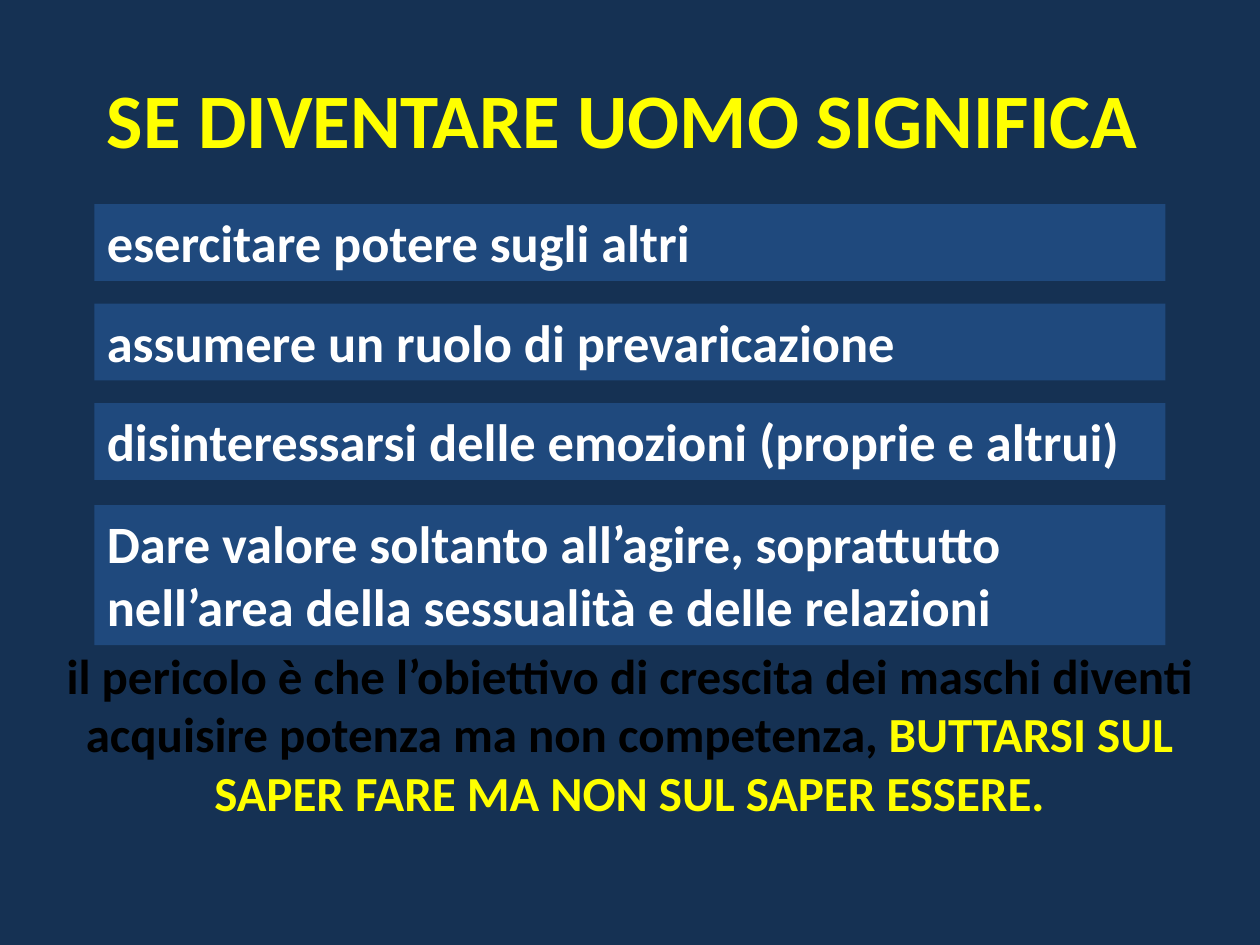
"""Build a slide on what becoming a man is taken to mean."""
from pptx import Presentation
from pptx.dml.color import RGBColor
from pptx.enum.shapes import MSO_SHAPE as Shape
from pptx.enum.text import MSO_ANCHOR as Anchor, PP_ALIGN as Align
from pptx.util import Inches, Pt

NAVY = RGBColor(0x15, 0x31, 0x53)
BLUE = RGBColor(0x1F, 0x49, 0x7D)
YELLOW = RGBColor(0xFF, 0xFF, 0x00)
WHITE = RGBColor(0xFF, 0xFF, 0xFF)
BLACK = RGBColor(0x00, 0x00, 0x00)


def write(box, spans, size, align):
    frame = box.text_frame
    frame.word_wrap = True
    frame.vertical_anchor = Anchor.TOP
    para = frame.paragraphs[0]
    para.alignment = align
    para.font.name = "Calibri"
    para.font.size = Pt(size)
    para.font.bold = True
    for text, color in spans:
        span = para.add_run()
        span.text = text
        span.font.color.rgb = color


deck = Presentation()
deck.slide_width = Inches(10)
deck.slide_height = Inches(7.5)
page = deck.slides.add_slide(deck.slide_layouts[6])
page.background.fill.solid()
page.background.fill.fore_color.rgb = NAVY

title = page.shapes.add_textbox(Inches(0.75), Inches(0.52), Inches(8.5), Inches(0.84))
write(title, [("SE DIVENTARE UOMO SIGNIFICA", YELLOW)], 44, Align.LEFT)

warning = page.shapes.add_textbox(Inches(0.35), Inches(5.07), Inches(9.29), Inches(1.51))
write(warning, [
    ("il pericolo è che l’obiettivo di crescita dei maschi diventi "
     "acquisire potenza ma non competenza, ", BLACK),
    ("BUTTARSI SUL SAPER FARE MA NON SUL SAPER ESSERE.", YELLOW),
], 28, Align.CENTER)

meanings = [
    (1.62, 0.61, "esercitare potere sugli altri"),
    (2.41, 0.61, "assumere un ruolo di prevaricazione"),
    (3.2, 0.61, "disinteressarsi delle emozioni (proprie e altrui)"),
    (4.01, 1.11, "Dare valore soltanto all’agire, soprattutto "
                 "nell’area della sessualità e delle relazioni"),
]
for top, height, text in meanings:
    bar = page.shapes.add_shape(
        Shape.RECTANGLE, Inches(0.75), Inches(top), Inches(8.5), Inches(height))
    bar.shadow.inherit = False
    bar.fill.solid()
    bar.fill.fore_color.rgb = BLUE
    bar.line.fill.background()
    write(bar, [(text, WHITE)], 30, Align.LEFT)

deck.save("out.pptx")
